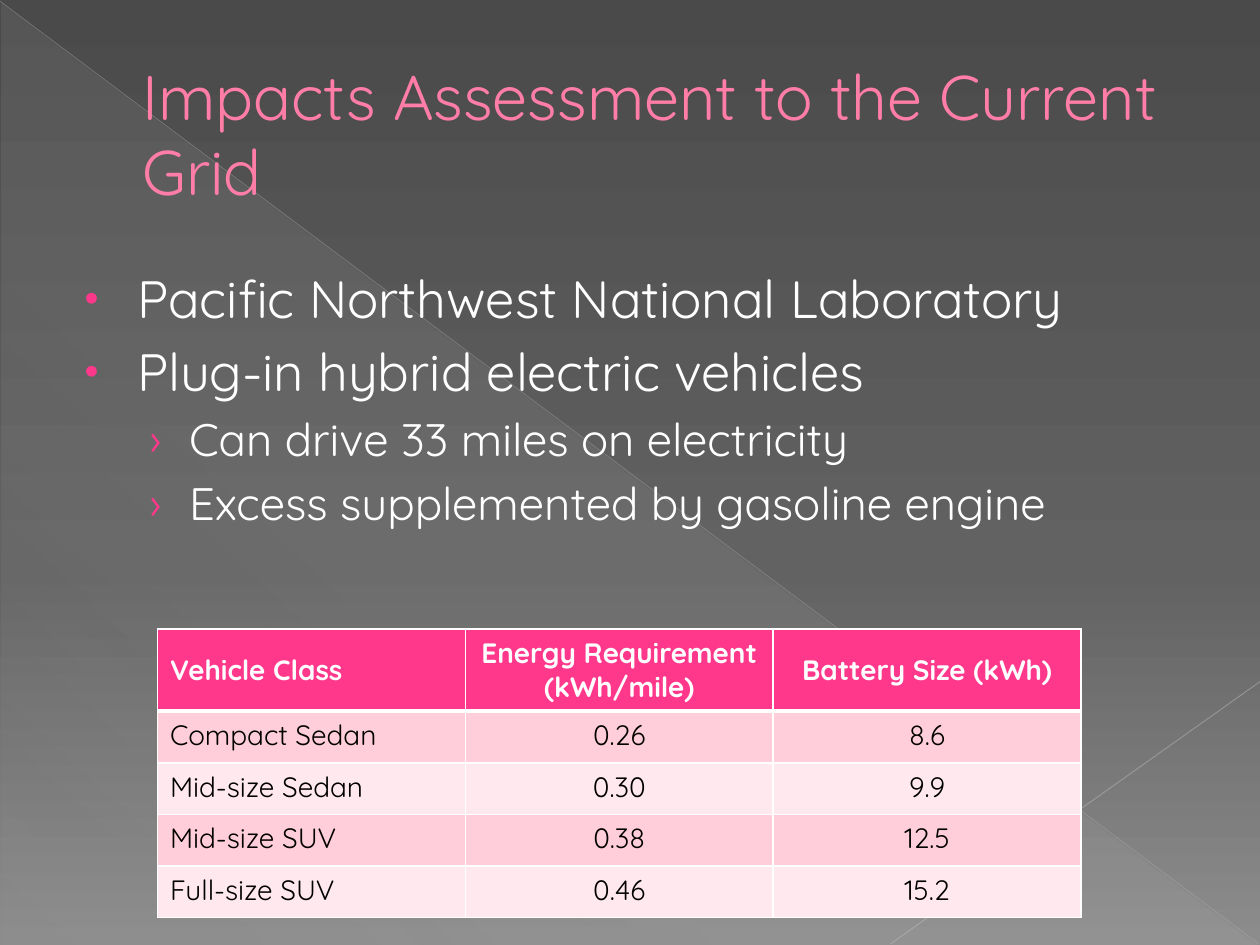
from lxml.etree import SubElement
from pptx import Presentation
from pptx.dml.color import RGBColor
from pptx.enum.shapes import MSO_CONNECTOR, MSO_SHAPE
from pptx.enum.text import MSO_ANCHOR, MSO_AUTO_SIZE, PP_ALIGN
from pptx.oxml.ns import qn
from pptx.util import Inches, Pt

WIDTH, HEIGHT = Inches(10), Inches(7.5)
FONT = "Quicksand"
WHITE = RGBColor(0xFF, 0xFF, 0xFF)
BLACK = RGBColor(0x00, 0x00, 0x00)
PINK = RGBColor(0xFF, 0x38, 0x8C)
TITLE_PINK = RGBColor(0xFF, 0x7D, 0xA7)
BANDS = (RGBColor(0xFF, 0xCE, 0xDA), RGBColor(0xFF, 0xE8, 0xEE))
VEIL = RGBColor(0xD2, 0xD2, 0xD2)
LONG_RAY = RGBColor(0xBF, 0xBF, 0xBF)
SHORT_RAY = RGBColor(0xC6, 0xC6, 0xC6)
BACKDROP = (
    (0, RGBColor(0x4A, 0x4A, 0x4A), 100),
    (60, RGBColor(0x62, 0x62, 0x62), 100),
    (100, RGBColor(0x8C, 0x8C, 0x8C), 100),
)
VEIL_STOPS = ((0, VEIL, 10), (70, VEIL, 8), (100, VEIL, 1))

TITLE = "Impacts Assessment to the Current Grid"
BULLETS = (
    (0, "Pacific Northwest National Laboratory"),
    (0, "Plug-in hybrid electric vehicles"),
    (1, "Can drive 33 miles on electricity"),
    (1, "Excess supplemented by gasoline engine"),
)
LEVELS = (
    {"left": 0.49, "hang": 0.42, "mark": "•", "percent": 80, "size": 30},
    {"left": 0.9, "hang": 0.31, "mark": "›", "percent": 95, "size": 26},
)
VEHICLES = (
    ("Vehicle Class", "Energy Requirement (kWh/mile)", "Battery Size (kWh)"),
    ("Compact Sedan", "0.26", "8.6"),
    ("Mid-size Sedan", "0.30", "9.9"),
    ("Mid-size SUV", "0.38", "12.5"),
    ("Full-size SUV", "0.46", "15.2"),
)


def add_node(parent, tag, **attributes):
    return SubElement(parent, qn(tag), {key: str(value) for key, value in attributes.items()})


def add_color(parent, color, opacity=100):
    node = add_node(parent, "a:srgbClr", val=color)
    if opacity < 100:
        add_node(node, "a:alpha", val=opacity * 1000)


def set_gradient(root, stops, angle):
    solid = root.xpath(".//a:solidFill")[0]
    parent = solid.getparent()
    gradient = add_node(parent, "a:gradFill", rotWithShape=1)
    parent.replace(solid, gradient)
    stop_list = add_node(gradient, "a:gsLst")
    for position, color, opacity in stops:
        add_color(add_node(stop_list, "a:gs", pos=position * 1000), color, opacity)
    add_node(gradient, "a:lin", ang=angle * 60000, scaled=0)


def place(shape, left, top, width, height):
    shape.left, shape.top = Inches(left), Inches(top)
    shape.width, shape.height = Inches(width), Inches(height)


def style_text(para, size, color, bold=False):
    for span in para.runs:
        span.font.name = FONT
        span.font.size = Pt(size)
        span.font.bold = bold
        span.font.color.rgb = color


def set_indent(para, left, hang=0):
    properties = para._p.get_or_add_pPr()
    properties.set("marL", str(Inches(left)))
    properties.set("indent", str(-Inches(hang)))
    return properties


def add_veil(page):
    veil = page.shapes.add_shape(
        MSO_SHAPE.RIGHT_TRIANGLE, Inches(0.01), Inches(0.02), Inches(9.98), Inches(7.48)
    )
    veil.shadow.inherit = False
    veil.fill.solid()
    set_gradient(veil.element, VEIL_STOPS, 133)
    veil.line.fill.background()


def add_ray(page, start, end, color, width, opacity):
    ray = page.shapes.add_connector(
        MSO_CONNECTOR.STRAIGHT, *(Inches(value) for value in start + end)
    )
    ray.line.width = Pt(width)
    ray.line.color.rgb = color
    node = ray.element.xpath(".//a:srgbClr")[0]
    add_node(node, "a:alpha", val=opacity * 1000)
    add_node(ray.element.spPr, "a:effectLst")


def fill_title(title):
    place(title, 0.5, 0.29, 9, 1.53)
    title.text_frame.text = TITLE
    title.text_frame.auto_size = MSO_AUTO_SIZE.NONE
    title.text_frame.vertical_anchor = MSO_ANCHOR.MIDDLE
    para = title.text_frame.paragraphs[0]
    para.alignment = PP_ALIGN.LEFT
    set_indent(para, 0.53)
    style_text(para, 36, TITLE_PINK)


def fill_body(body):
    place(body, 0.5, 2.06, 9, 5)
    frame = body.text_frame
    frame.text = "\n".join(text for _, text in BULLETS)
    frame.auto_size = MSO_AUTO_SIZE.NONE
    for para, (level, _) in zip(frame.paragraphs, BULLETS):
        look = LEVELS[level]
        para.level = level
        properties = set_indent(para, look["left"], look["hang"])
        add_color(add_node(properties, "a:buClr"), PINK)
        add_node(properties, "a:buSzPct", val=look["percent"] * 1000)
        add_node(properties, "a:buFont", typeface=FONT)
        add_node(properties, "a:buChar", char=look["mark"])
        style_text(para, look["size"], WHITE)


def set_borders(cell, top, bottom):
    properties = cell._tc.get_or_add_tcPr()
    for side, width in (("L", 1), ("R", 1), ("T", top), ("B", bottom)):
        border = add_node(properties, f"a:ln{side}", w=Pt(width))
        add_color(add_node(border, "a:solidFill"), WHITE)


def fill_cell(cell, text, row, column):
    header = row == 0
    set_borders(cell, 3 if row == 1 else 1, 3 if header else 1)
    cell.fill.solid()
    cell.fill.fore_color.rgb = PINK if header else BANDS[(row - 1) % 2]
    cell.vertical_anchor = MSO_ANCHOR.MIDDLE if header else MSO_ANCHOR.TOP
    cell.text_frame.text = text
    para = cell.text_frame.paragraphs[0]
    para.alignment = PP_ALIGN.CENTER if column else PP_ALIGN.LEFT
    style_text(para, 16, WHITE if header else BLACK, header)


def add_vehicle_table(page):
    frame = page.shapes.add_table(
        len(VEHICLES), len(VEHICLES[0]), Inches(1.25), Inches(4.99), Inches(7.33), Inches(2.26)
    )
    table = frame.table
    for index, row in enumerate(table.rows):
        row.height = Inches(0.41 if index else 0.64)
    for row, values in enumerate(VEHICLES):
        for column, text in enumerate(values):
            fill_cell(table.cell(row, column), text, row, column)


def main():
    deck = Presentation()
    deck.slide_width, deck.slide_height = WIDTH, HEIGHT
    page = deck.slides.add_slide(deck.slide_layouts[1])
    page.background.fill.solid()
    set_gradient(page.element, BACKDROP, 90)
    title, body = page.shapes.title, page.placeholders[1]
    add_veil(page)
    add_ray(page, (0, 0.01), (9.99, 7.49), LONG_RAY, 0.39, 35)
    add_ray(page, (10, 5.41), (7.07, 7.49), SHORT_RAY, 0.47, 45)
    for holder in (title, body):
        page.shapes.element.append(holder.element)
    fill_title(title)
    fill_body(body)
    add_vehicle_table(page)
    deck.save("out.pptx")


if __name__ == "__main__":
    main()
